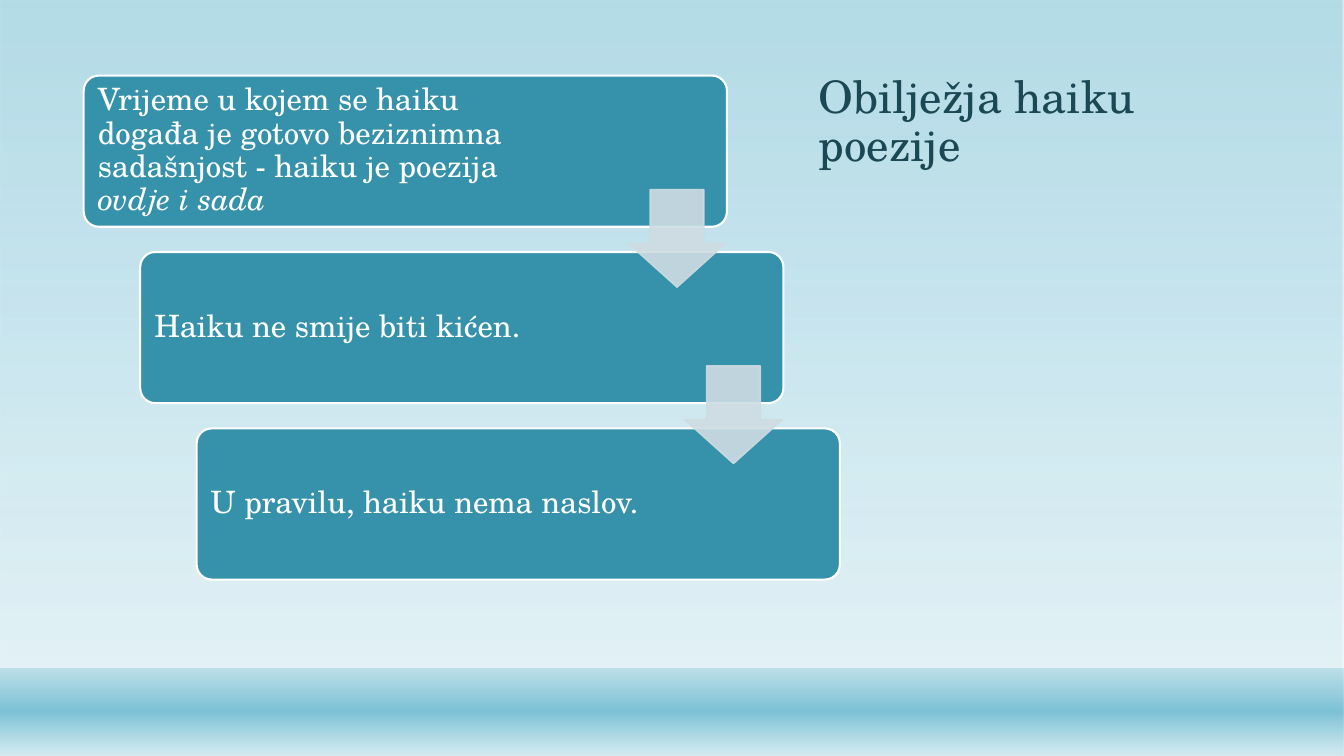
from dataclasses import dataclass

from lxml import etree
from pptx import Presentation
from pptx.dml.color import RGBColor
from pptx.enum import shapes, text
from pptx.oxml import ns
from pptx.util import Inches, Pt


@dataclass(frozen=True)
class Theme:
    """Colours, font and type sizes of the deck."""
    sky: str = "7DC2D6"
    mist: str = "D4EBF1"
    ink: str = "1B4855"
    card: str = "3691AA"
    arrow: str = "CEDCE2"
    white: str = "FFFFFF"
    font: str = "TeX Gyre Schola"
    head: int = 32
    body: int = 22


THEME = Theme()
STEPS = [
    [("Vrijeme u kojem se haiku događa je gotovo beziznimna "
      "sadašnjost - haiku je poezija ", False), ("ovdje i sada", True)],
    [("Haiku ne smije biti kićen.", False)],
    [("U pravilu, haiku nema naslov.", False)],
]


def rgb(code):
    """Turn a hex code into a colour."""
    return RGBColor.from_string(code)


def fade(node, share):
    """Set the opacity of a colour node in percent."""
    etree.SubElement(node, ns.qn("a:alpha")).set("val", str(share * 1000))


def add_form(slide, kind, box, fill, line, width):
    """Add a flat preset shape with a solid fill and line."""
    form = slide.shapes.add_shape(kind, *map(Inches, box))
    form.shadow.inherit = False
    form.fill.solid()
    form.fill.fore_color.rgb = rgb(fill)
    form.line.color.rgb = rgb(line)
    form.line.width = Pt(width)
    return form


def add_runs(frame, parts, size, color):
    """Write styled runs into the first paragraph of a frame."""
    para = frame.paragraphs[0]
    para.alignment = text.PP_ALIGN.LEFT
    para.line_spacing = 0.9
    for words, slant in parts:
        run = para.add_run()
        run.text = words
        run.font.name = THEME.font
        run.font.size = Pt(size)
        run.font.italic = slant
        run.font.color.rgb = rgb(color)


def add_wash(slide, box, stops):
    """Add a borderless vertical gradient behind the title."""
    wash = slide.shapes.add_shape(shapes.MSO_SHAPE.RECTANGLE, *map(Inches, box))
    wash.shadow.inherit = False
    wash.line.fill.background()
    wash.fill.gradient()
    grad = wash.element.spPr.find(ns.qn("a:gradFill"))
    grad.find(ns.qn("a:lin")).set("ang", "5400000")
    ramp = grad.find(ns.qn("a:gsLst"))
    for old in list(ramp):
        ramp.remove(old)
    for place, code, share in stops:
        stop = etree.SubElement(ramp, ns.qn("a:gs"), pos=str(place * 1000))
        tint = etree.SubElement(stop, ns.qn("a:srgbClr"), val=code)
        fade(tint, share)
    slide.shapes.title.element.addprevious(wash.element)


def add_title(slide, box):
    """Place and fill the title."""
    title = slide.shapes.title
    title.left, title.top, title.width, title.height = map(Inches, box)
    frame = title.text_frame
    frame.word_wrap = True
    frame.auto_size = text.MSO_AUTO_SIZE.NONE
    frame.vertical_anchor = text.MSO_ANCHOR.BOTTOM
    add_runs(frame, [("Obilježja haiku poezije", False)], THEME.head, THEME.ink)


def add_card(slide, box, parts):
    """Add a rounded card with its text."""
    left, top, width, height = box
    card = add_form(slide, shapes.MSO_SHAPE.ROUNDED_RECTANGLE, box,
                    THEME.card, THEME.white, 1.5)
    card.adjustments[0] = 0.1
    label = slide.shapes.add_textbox(
        *map(Inches, (left + 0.05, top + 0.04, 4.76, height - 0.09)))
    frame = label.text_frame
    frame.word_wrap = True
    frame.vertical_anchor = text.MSO_ANCHOR.MIDDLE
    frame.margin_left = frame.margin_right = Inches(0.09)
    frame.margin_top = frame.margin_bottom = Inches(0.09)
    add_runs(frame, parts, THEME.body, THEME.white)


def add_arrow(slide, box):
    """Add a translucent arrow pointing down."""
    arrow = add_form(slide, shapes.MSO_SHAPE.DOWN_ARROW, box,
                     THEME.arrow, THEME.arrow, 1)
    arrow.adjustments[0] = 0.55
    arrow.adjustments[1] = 0.45
    for node in arrow.element.spPr.iter(ns.qn("a:srgbClr")):
        fade(node, 90)


def add_stairs(slide, box):
    """Lay out the cards as stairs joined by arrows."""
    left, top, width, height = box
    spots = [(left + 0.56 * i, top + 1.75 * i) for i in range(len(STEPS))]
    for (x, y), parts in zip(spots, STEPS):
        add_card(slide, (x, y, width, height), parts)
    for x, y in spots[:-1]:
        add_arrow(slide, (x + 5.4, y + 1.13, 0.97, 0.97))


def main():
    """Build and save the deck."""
    deck = Presentation()
    deck.slide_width, deck.slide_height = Inches(13.33), Inches(7.5)
    slide = deck.slides.add_slide(deck.slide_layouts[5])
    add_wash(slide, (0, 0, 13.33, 7.5),
             [(0, THEME.sky, 58), (88, THEME.mist, 65)])
    add_wash(slide, (0, 6.63, 13.33, 0.87),
             [(1, THEME.sky, 38), (49, THEME.sky, 100), (100, THEME.mist, 89)])
    add_title(slide, (8.02, 0.89, 4.7, 0.86))
    add_stairs(slide, (0.83, 0.75, 6.38, 1.5))
    deck.save("out.pptx")


if __name__ == "__main__":
    main()
